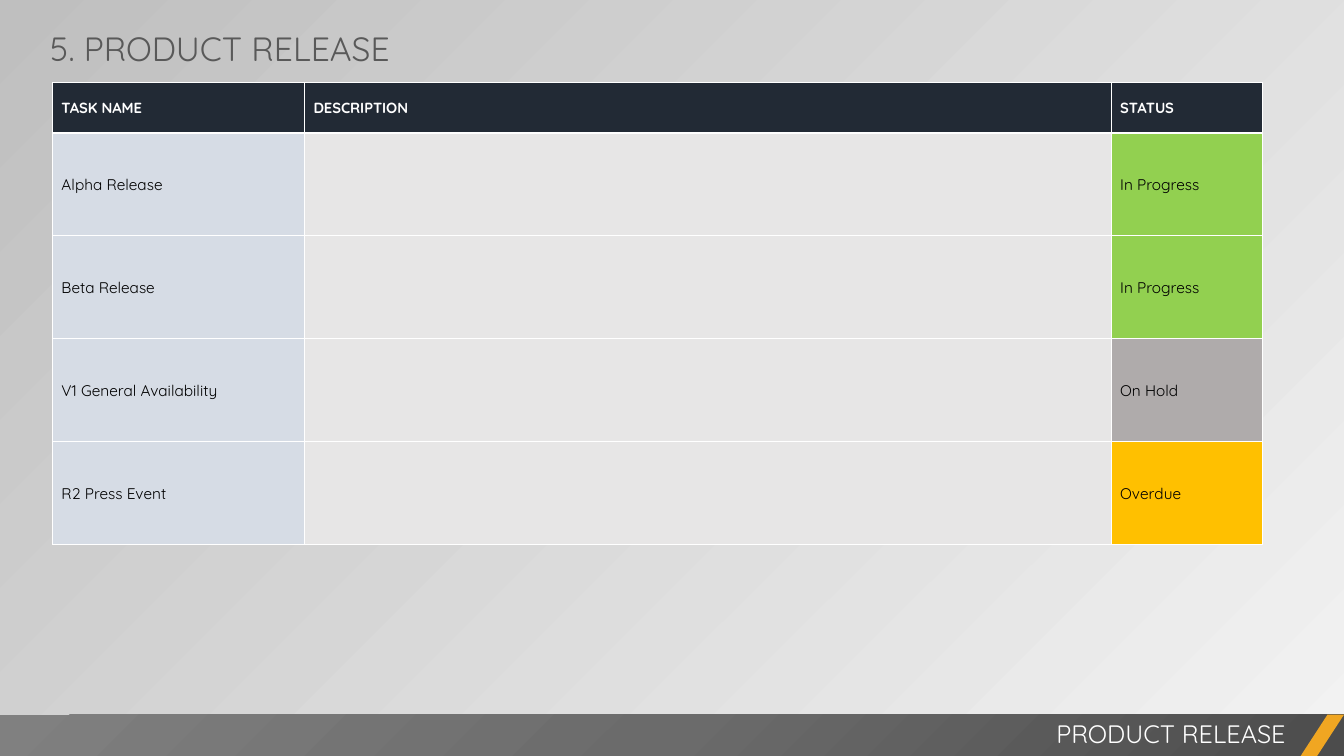
from dataclasses import dataclass

from lxml.etree import SubElement
from pptx import Presentation
from pptx.dml.color import RGBColor
from pptx.enum.shapes import MSO_SHAPE
from pptx.enum.text import MSO_ANCHOR, MSO_AUTO_SIZE, PP_ALIGN
from pptx.oxml.ns import qn
from pptx.shapes.autoshape import Shape
from pptx.slide import Slide
from pptx.table import _Cell
from pptx.text.text import _Paragraph
from pptx.util import Inches, Pt

FONT = "Quicksand"
COLORS = {
    "white": "FFFFFF",
    "black": "000000",
    "title": "595959",
    "header": "222A35",
    "task": "D6DCE5",
    "description": "E7E6E6",
    "accent": "F0A622",
    "background_light": "F2F2F2",
    "background_dark": "BFBFBF",
    "footer_dark": "4C4C4C",
    "footer_middle": "6B6B6B",
    "footer_light": "808080",
}
STATUS_COLORS = {"In Progress": "92D050", "On Hold": "AFABAB", "Overdue": "FFC000"}


@dataclass(frozen=True)
class Task:
    name: str
    description: str
    status: str


@dataclass(frozen=True)
class Label:
    text: str
    left: float
    top: float
    width: float
    height: float
    size: float
    color: str
    align: PP_ALIGN
    wrap: bool


@dataclass(frozen=True)
class CellStyle:
    fill: str
    color: str
    size: float
    bold: bool = False


HEADINGS = ("TASK NAME", "DESCRIPTION", "STATUS")
TASKS = (
    Task("Alpha Release", "", "In Progress"),
    Task("Beta Release", "", "In Progress"),
    Task("V1 General Availability", "", "On Hold"),
    Task("R2 Press Event", "", "Overdue"),
)
LABELS = (
    Label("PRODUCT RELEASE", 5.25, 7.08, 7.6, 0.4, 18, COLORS["white"], PP_ALIGN.RIGHT, True),
    Label("5. PRODUCT RELEASE", 0.4, 0.23, 3.57, 0.5, 24, COLORS["title"], PP_ALIGN.LEFT, False),
)
COLUMN_WIDTHS = (2.5, 8, 1.5)
HEADER_HEIGHT = 0.5
TASK_HEIGHT = 1.02
FOOTER_TOP = 7.09
FOOTER_HEIGHT = 0.41


def add_span(para: _Paragraph, text: str, size: float, color: str, bold: bool = False) -> None:
    span = para.add_run()
    span.text = text
    span.font.name = FONT
    span.font.size = Pt(size)
    span.font.bold = bold
    span.font.color.rgb = RGBColor.from_string(color)


def add_label(page: Slide, label: Label) -> None:
    box = page.shapes.add_textbox(
        Inches(label.left), Inches(label.top), Inches(label.width), Inches(label.height)
    )
    frame = box.text_frame
    frame.word_wrap = label.wrap
    frame.auto_size = MSO_AUTO_SIZE.SHAPE_TO_FIT_TEXT
    para = frame.paragraphs[0]
    para.alignment = label.align
    add_span(para, label.text, label.size, label.color)


def paint_background(page: Slide) -> None:
    fill = page.background.fill
    fill.gradient()
    fill.gradient_angle = 135
    for stop, name in zip(fill.gradient_stops, ("background_light", "background_dark")):
        stop.color.rgb = RGBColor.from_string(COLORS[name])


def add_footer_shape(page: Slide, kind: MSO_SHAPE, left: float, width: float) -> Shape:
    shape = page.shapes.add_shape(
        kind, Inches(left), Inches(FOOTER_TOP), Inches(width), Inches(FOOTER_HEIGHT)
    )
    shape.shadow.inherit = False
    shape.line.fill.background()
    return shape


def paint_corner_gradient(shape: Shape, colors: tuple[str, ...]) -> None:
    shape.fill.gradient()
    gradient = shape.element.spPr.find(qn("a:gradFill"))
    for child in list(gradient):
        gradient.remove(child)
    stops = SubElement(gradient, qn("a:gsLst"))
    for index, color in enumerate(colors):
        position = 100000 * index // (len(colors) - 1)
        stop = SubElement(stops, qn("a:gs"), pos=str(position))
        SubElement(stop, qn("a:srgbClr"), val=color)
    circle = SubElement(gradient, qn("a:path"), {"path": "circle"})
    SubElement(circle, qn("a:fillToRect"), l="100000", t="100000")


def add_footer(page: Slide) -> None:
    band = add_footer_shape(page, MSO_SHAPE.RECTANGLE, 0, 13.33)
    paint_corner_gradient(
        band, (COLORS["footer_dark"], COLORS["footer_middle"], COLORS["footer_light"])
    )
    accent = add_footer_shape(page, MSO_SHAPE.PARALLELOGRAM, 12.9, 0.43)
    accent.adjustments[0] = 0.65
    accent.fill.solid()
    accent.fill.fore_color.rgb = RGBColor.from_string(COLORS["accent"])


def add_borders(cell: _Cell) -> None:
    properties = cell._tc.get_or_add_tcPr()
    for side in ("L", "R", "T", "B"):
        line = SubElement(properties, qn(f"a:ln{side}"), w=str(Pt(1)))
        fill = SubElement(line, qn("a:solidFill"))
        SubElement(fill, qn("a:srgbClr"), val=COLORS["white"])


def fill_cell(cell: _Cell, text: str, style: CellStyle) -> None:
    add_borders(cell)
    cell.fill.solid()
    cell.fill.fore_color.rgb = RGBColor.from_string(style.fill)
    cell.vertical_anchor = MSO_ANCHOR.MIDDLE
    cell.margin_left = Inches(0.09)
    cell.margin_top = cell.margin_right = Inches(0.01)
    cell.margin_bottom = 0
    if text:
        add_span(cell.text_frame.paragraphs[0], text, style.size, style.color, style.bold)


def add_task_table(page: Slide) -> None:
    heights = [HEADER_HEIGHT] + [TASK_HEIGHT] * len(TASKS)
    table = page.shapes.add_table(
        len(heights), len(COLUMN_WIDTHS), Inches(0.52), Inches(0.82),
        Inches(sum(COLUMN_WIDTHS)), Inches(sum(heights)),
    ).table
    for column, width in zip(table.columns, COLUMN_WIDTHS):
        column.width = Inches(width)
    for row, height in zip(table.rows, heights):
        row.height = Inches(height)

    header_style = CellStyle(COLORS["header"], COLORS["white"], 10.5, True)
    for column, heading in enumerate(HEADINGS):
        fill_cell(table.cell(0, column), heading, header_style)
    for row, task in enumerate(TASKS, start=1):
        texts = (task.name, task.description, task.status)
        fills = (COLORS["task"], COLORS["description"], STATUS_COLORS[task.status])
        for column, (text, fill) in enumerate(zip(texts, fills)):
            fill_cell(table.cell(row, column), text, CellStyle(fill, COLORS["black"], 11))


def main() -> None:
    deck = Presentation()
    deck.slide_width = Inches(13.33)
    deck.slide_height = Inches(7.5)
    page = deck.slides.add_slide(deck.slide_layouts[6])
    paint_background(page)
    add_footer(page)
    for label in LABELS:
        add_label(page, label)
    add_task_table(page)
    deck.save("out.pptx")


if __name__ == "__main__":
    main()
